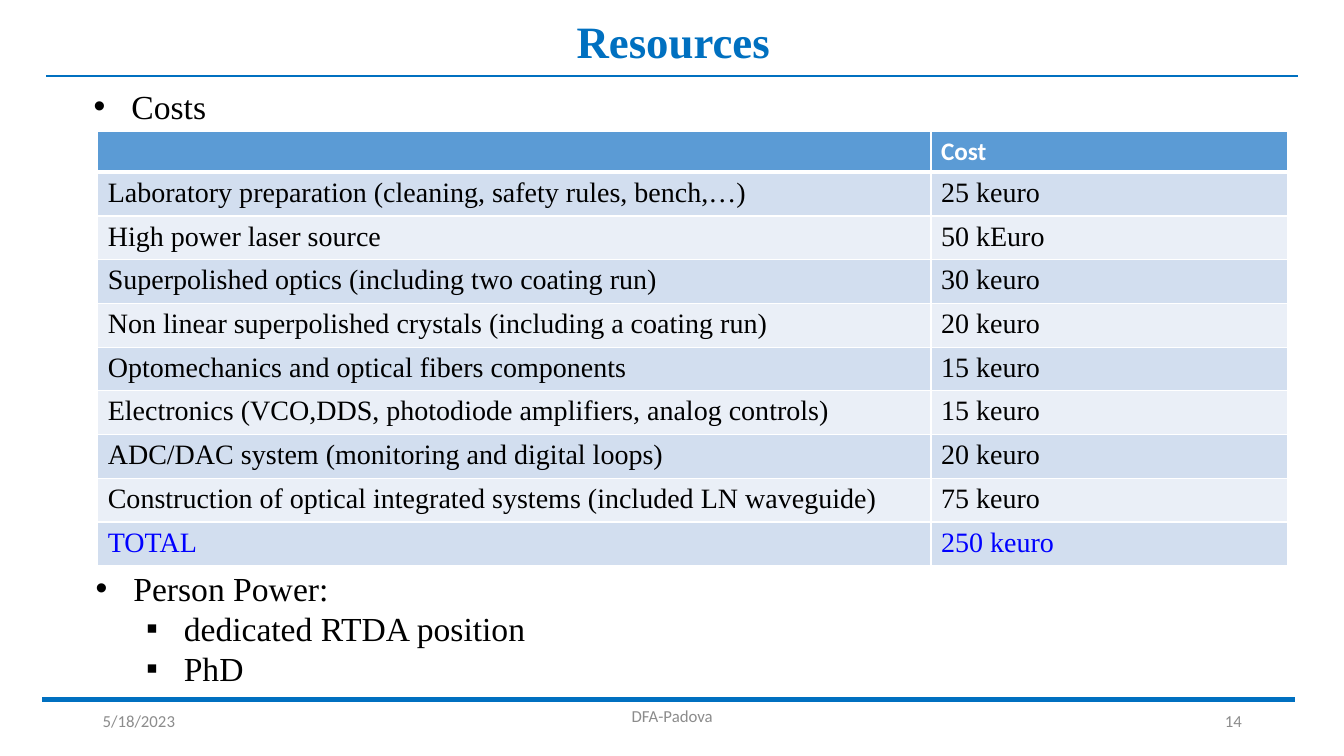
from lxml.etree import SubElement
from pptx import Presentation
from pptx.dml.color import RGBColor
from pptx.enum.shapes import MSO_CONNECTOR as CONNECTOR
from pptx.enum.text import MSO_ANCHOR as ANCHOR, PP_ALIGN as ALIGN
from pptx.oxml.ns import qn
from pptx.util import Pt

COLORS = {
    "accent": "0070C0", "footer": "8C8C8C", "text": "000000", "total": "0000FF",
    "white": "FFFFFF", "header": "5B9BD5", "odd": "D2DEEF", "even": "EAEFF7",
}
SERIF, SANS = "Times New Roman", "Calibri"
HEADER_HEIGHT, ROW_HEIGHT = 29.2, 31.15
COSTS = [
    ("", "Cost"),
    ("Laboratory preparation (cleaning, safety rules, bench,…)", "25 keuro"),
    ("High power laser source", "50 kEuro"),
    ("Superpolished optics (including two coating run)", "30 keuro"),
    ("Non linear superpolished crystals (including a coating run)", "20 keuro"),
    ("Optomechanics and optical fibers components", "15 keuro"),
    ("Electronics (VCO,DDS, photodiode amplifiers, analog controls)", "15 keuro"),
    ("ADC/DAC system (monitoring and digital loops)", "20 keuro"),
    ("Construction of optical integrated systems (included LN waveguide)", "75 keuro"),
    ("TOTAL", "250 keuro"),
]


def color(name):
    return RGBColor.from_string(COLORS[name])


def style(paragraph, font, size, tint, bold=False):
    targets = [run.font for run in paragraph.runs] or [paragraph.font]
    for target in targets:
        target.name, target.size, target.bold = font, Pt(size), bold
        target.color.rgb = color(tint)


def add_label(slide, box, text, font, size, tint, align, bold=False, anchor=ANCHOR.TOP):
    frame = slide.shapes.add_textbox(*map(Pt, box)).text_frame
    frame.word_wrap = True
    frame.vertical_anchor = anchor
    frame.text = text
    frame.paragraphs[0].alignment = align
    style(frame.paragraphs[0], font, size, tint, bold)


def add_rule(slide, left, top, width, weight):
    rule = slide.shapes.add_connector(
        CONNECTOR.STRAIGHT, Pt(left), Pt(top), Pt(left + width), Pt(top))
    rule.line.color.rgb = color("accent")
    rule.line.width = Pt(weight)
    SubElement(rule._element.spPr, qn("a:effectLst"))


def add_title(slide, left, top, width, height):
    add_label(slide, (left + 127, top, 642, height), "Resources",
              SERIF, 32, "accent", ALIGN.CENTER, bold=True)
    add_rule(slide, left, top + 47.75, width, 1.75)


def add_footer(slide, left, top, width):
    add_rule(slide, left, top, width, 3)
    for text, shift, drop, span, align in (
            ("5/18/2023", 36, 0.7, 216, ALIGN.LEFT),
            ("DFA-Padova", 288, -2.9, 324, ALIGN.CENTER),
            ("14", 648, 0.7, 216, ALIGN.RIGHT)):
        add_label(slide, (left + shift, top + drop, span, 28.8), text,
                  SANS, 12, "footer", align, anchor=ANCHOR.MIDDLE)


def add_bullets(slide, left, top, width, height, items):
    frame = slide.shapes.add_textbox(*map(Pt, (left, top, width, height))).text_frame
    frame.word_wrap = True
    frame.text = "\n".join(text for text, level in items)
    for paragraph, (text, level) in zip(frame.paragraphs, items):
        paragraph.level = level
        style(paragraph, SERIF, 24, "text")
        props = paragraph._p.get_or_add_pPr()
        props.set("marL", str(Pt(27 + 36 * level)))
        props.set("indent", str(Pt(-27)))
        SubElement(props, qn("a:buFont"), typeface="Arial")
        SubElement(props, qn("a:buChar"), char="•▪"[level])


def add_borders(cell, row):
    props = cell._tc.get_or_add_tcPr()
    weights = {"L": 1, "R": 1, "T": 3 if row == 1 else 1, "B": 3 if row == 0 else 1}
    for side, weight in weights.items():
        border = SubElement(props, qn("a:ln" + side), w=str(Pt(weight)))
        fill = SubElement(border, qn("a:solidFill"))
        SubElement(fill, qn("a:srgbClr"), val=COLORS["white"])


def add_cost_table(slide, left, top, width):
    height = HEADER_HEIGHT + ROW_HEIGHT * (len(COSTS) - 1)
    table = slide.shapes.add_table(
        len(COSTS), 2, *map(Pt, (left, top, width, height))).table
    table.columns[0].width = Pt(width * 0.7)
    table.columns[1].width = Pt(width * 0.3)
    for row, values in enumerate(COSTS):
        table.rows[row].height = Pt(ROW_HEIGHT if row else HEADER_HEIGHT)
        shade = ("odd" if row % 2 else "even") if row else "header"
        tint = "total" if row == len(COSTS) - 1 else "text"
        for column, value in enumerate(values):
            cell = table.cell(row, column)
            cell.text = value
            add_borders(cell, row)
            cell.fill.solid()
            cell.fill.fore_color.rgb = color(shade)
            if row:
                style(cell.text_frame.paragraphs[0], SERIF, 20, tint)
            else:
                style(cell.text_frame.paragraphs[0], SANS, 18, "white", bold=True)


def add_resources_slide(deck):
    slide = deck.slides.add_slide(deck.slide_layouts[6])
    add_title(slide, 33, 6.4, 894.5, 46)
    add_footer(slide, 30.2, 499.7, 894.5)
    add_cost_table(slide, 69.8, 93.8, 850.3)
    add_bullets(slide, 61.2, 401.8, 841, 94.3, [
        ("Person Power:", 0), ("dedicated RTDA position", 1), ("PhD", 1)])
    add_bullets(slide, 59.8, 57.6, 841, 36, [("Costs", 0)])


def main():
    deck = Presentation()
    deck.slide_width, deck.slide_height = Pt(960), Pt(540)
    add_resources_slide(deck)
    deck.save("out.pptx")


if __name__ == "__main__":
    main()
